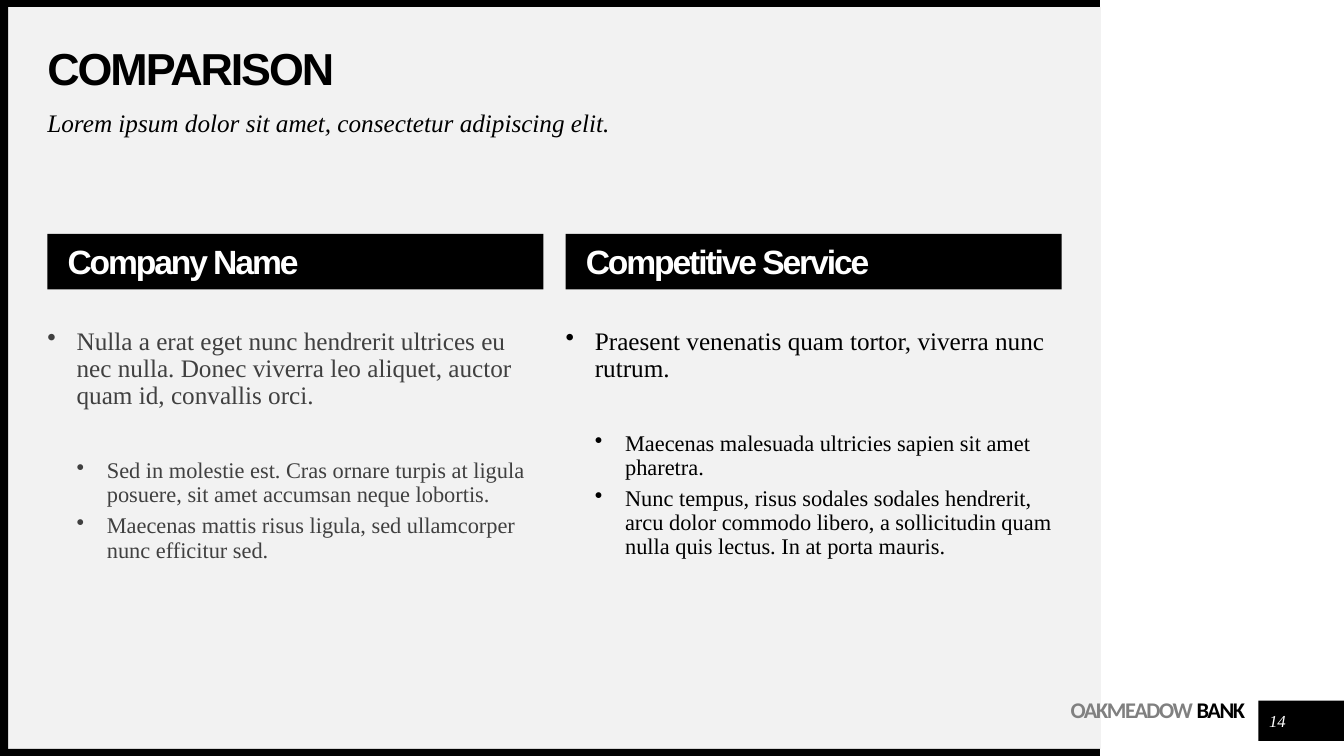
from dataclasses import dataclass

from lxml import etree
from pptx import Presentation
from pptx.dml.color import RGBColor
from pptx.enum.shapes import MSO_SHAPE
from pptx.enum.text import MSO_ANCHOR, MSO_AUTO_SIZE, PP_ALIGN
from pptx.oxml.ns import qn
from pptx.util import Inches, Pt

RECTANGLE = MSO_SHAPE.RECTANGLE
TOP, MIDDLE = MSO_ANCHOR.TOP, MSO_ANCHOR.MIDDLE
LEFT, CENTER, RIGHT = PP_ALIGN.LEFT, PP_ALIGN.CENTER, PP_ALIGN.RIGHT
NO_AUTOFIT = MSO_AUTO_SIZE.NONE

COLORS = {
    "black": "000000",
    "white": "FFFFFF",
    "panel": "F2F2F2",
    "charcoal": "404040",
    "gray": "808080",
}
SANS, SERIF, BRAND = "Arial", "Times New Roman", "Calibri"
MARGIN = 0.47
CONTENT_WIDTH = 10.06
COLUMN_WIDTH = 4.92
COLUMN_STEP = 5.14


@dataclass(frozen=True)
class Block:
    """A filled rectangle, measured in inches."""
    left: float
    top: float
    width: float
    height: float
    color: str


@dataclass(frozen=True)
class Style:
    """Character formatting; tracking is in points."""
    size: float
    face: str
    color: str
    bold: bool = False
    italic: bool = False
    tracking: float = 0


@dataclass(frozen=True)
class Level:
    """Paragraph formatting of one bullet level."""
    size: float
    margin: float
    hanging: float
    space_before: float


@dataclass(frozen=True)
class Column:
    """One side of the comparison."""
    heading: str
    lead: str
    details: tuple[str, ...]
    color: str


BLOCKS = (
    Block(0.08, 0.07, 10.84, 7.36, "panel"),
    Block(12.48, 6.95, 0.86, 0.4, "black"),
    Block(0, 7.43, 10.91, 0.07, "black"),
    Block(0, 0, 10.91, 0.07, "black"),
    Block(0, 0.03, 0.08, 7.47, "black"),
)
TITLE_STYLE = Style(32, SANS, "black", bold=True, tracking=-1.5)
SUBTITLE_STYLE = Style(18, SERIF, "black", italic=True)
HEADING_STYLE = Style(24, SANS, "white", bold=True, tracking=-1.5)
NUMBER_STYLE = Style(12, SERIF, "white", italic=True)
BRAND_SPANS = (("OAKMEADOW ", "gray"), ("BANK", "black"))
LEAD = Level(18, 0.29, 0.29, 10)
DETAIL = Level(16, 0.59, 0.3, 5)
DETAIL_GAP = 35
COLUMNS = (
    Column(
        "Company Name",
        "Nulla a erat eget nunc hendrerit ultrices eu nec nulla. "
        "Donec viverra leo aliquet, auctor quam id, convallis orci.",
        ("Sed in molestie est. Cras ornare turpis at ligula posuere, "
         "sit amet accumsan neque lobortis.",
         "Maecenas mattis risus ligula, sed ullamcorper nunc efficitur sed."),
        "charcoal",
    ),
    Column(
        "Competitive Service",
        "Praesent venenatis quam tortor, viverra nunc rutrum.",
        ("Maecenas malesuada ultricies sapien sit amet pharetra.",
         "Nunc tempus, risus sodales sodales hendrerit, arcu dolor commodo "
         "libero, a sollicitudin quam nulla quis lectus. In at porta mauris."),
        "black",
    ),
)


def rgb(name: str) -> RGBColor:
    """Return the named colour."""
    return RGBColor.from_string(COLORS[name])


def add_block(page, block: Block):
    """Draw a plain filled rectangle."""
    box = page.shapes.add_shape(
        RECTANGLE, Inches(block.left), Inches(block.top),
        Inches(block.width), Inches(block.height))
    box.shadow.inherit = False
    box.fill.solid()
    box.fill.fore_color.rgb = rgb(block.color)
    box.line.fill.background()
    return box


def add_text_box(page, left: float, top: float, width: float, height: float):
    """Add an empty text box."""
    return page.shapes.add_textbox(
        Inches(left), Inches(top), Inches(width), Inches(height))


def prepare_frame(box, anchor=TOP, inset_left: float = 0, inset_top: float = 0):
    """Set wrapping, insets and anchor, and return the text frame."""
    frame = box.text_frame
    frame.word_wrap = True
    frame.auto_size = NO_AUTOFIT
    frame.vertical_anchor = anchor
    frame.margin_left, frame.margin_top = Inches(inset_left), Inches(inset_top)
    frame.margin_right = frame.margin_bottom = 0
    return frame


def apply_style(font, style: Style) -> None:
    """Apply character formatting to a paragraph or run font."""
    font.size = Pt(style.size)
    font.name = style.face
    font.bold = style.bold
    font.italic = style.italic
    font.color.rgb = rgb(style.color)


def add_span(para, text: str, tracking: float = 0):
    """Append a run with optional letter spacing."""
    span = para.add_run()
    span.text = text
    if tracking:
        span._r.get_or_add_rPr().set("spc", str(round(tracking * 100)))
    return span


def write_line(frame, text: str, style: Style, align=LEFT, spacing: float = 0.9) -> None:
    """Write a single styled paragraph."""
    para = frame.paragraphs[0]
    para.alignment = align
    para.line_spacing = spacing
    para.space_before = Pt(0)
    apply_style(para.font, style)
    add_span(para, text, style.tracking)


def write_bullet(para, text: str, level: Level, color: str, space_before: float) -> None:
    """Write a bulleted paragraph with a hanging indent."""
    para.level = 0 if level is LEAD else 1
    para.alignment = LEFT
    para.line_spacing = 0.9
    para.space_before = Pt(space_before)
    apply_style(para.font, Style(level.size, SERIF, color))
    add_span(para, text)
    properties = para._p.get_or_add_pPr()
    properties.set("marL", str(Inches(level.margin)))
    properties.set("indent", str(-Inches(level.hanging)))
    bullet = etree.Element(qn("a:buChar"), char="•")
    properties.find(qn("a:defRPr")).addprevious(bullet)


def add_column(page, index: int, column: Column) -> None:
    """Draw one heading bar with its bullet list."""
    left = MARGIN + index * COLUMN_STEP
    bar = add_block(page, Block(left, 2.32, COLUMN_WIDTH, 0.55, "black"))
    write_line(prepare_frame(bar, MIDDLE, 0.2, 0.04), column.heading, HEADING_STYLE)
    frame = prepare_frame(add_text_box(page, left, 3.26, COLUMN_WIDTH, 2.76))
    write_bullet(frame.paragraphs[0], column.lead, LEAD, column.color, LEAD.space_before)
    for position, detail in enumerate(column.details):
        gap = DETAIL.space_before if position else DETAIL_GAP
        write_bullet(frame.add_paragraph(), detail, DETAIL, column.color, gap)


def add_brand(page) -> None:
    """Write the two-tone company name."""
    frame = prepare_frame(add_text_box(page, 10.53, 6.94, 1.82, 0.44), inset_top=0.04)
    para = frame.paragraphs[0]
    para.alignment = RIGHT
    para.line_spacing = Pt(14)
    apply_style(para.font, Style(16, BRAND, "black", bold=True))
    for text, color in BRAND_SPANS:
        add_span(para, text, -1).font.color.rgb = rgb(color)


def main() -> None:
    """Build and save the comparison slide."""
    deck = Presentation()
    deck.slide_width, deck.slide_height = Inches(13.33), Inches(7.5)
    page = deck.slides.add_slide(deck.slide_layouts[5])
    for block in BLOCKS:
        add_block(page, block)
    add_brand(page)
    title = page.shapes.title
    page.shapes._spTree.append(title._element)
    title.left, title.top = Inches(MARGIN), Inches(0.47)
    title.width, title.height = Inches(CONTENT_WIDTH), Inches(0.47)
    write_line(prepare_frame(title, MIDDLE), "COMPARISON", TITLE_STYLE)
    subtitle = add_text_box(page, MARGIN, 1.1, CONTENT_WIDTH, 0.39)
    write_line(prepare_frame(subtitle),
               "Lorem ipsum dolor sit amet, consectetur adipiscing elit.", SUBTITLE_STYLE)
    for index, column in enumerate(COLUMNS):
        add_column(page, index, column)
    number = add_text_box(page, 12.52, 7, 0.3, 0.3)
    write_line(prepare_frame(number, MIDDLE), "14", NUMBER_STYLE, CENTER, 1.0)
    deck.save("out.pptx")


if __name__ == "__main__":
    main()
